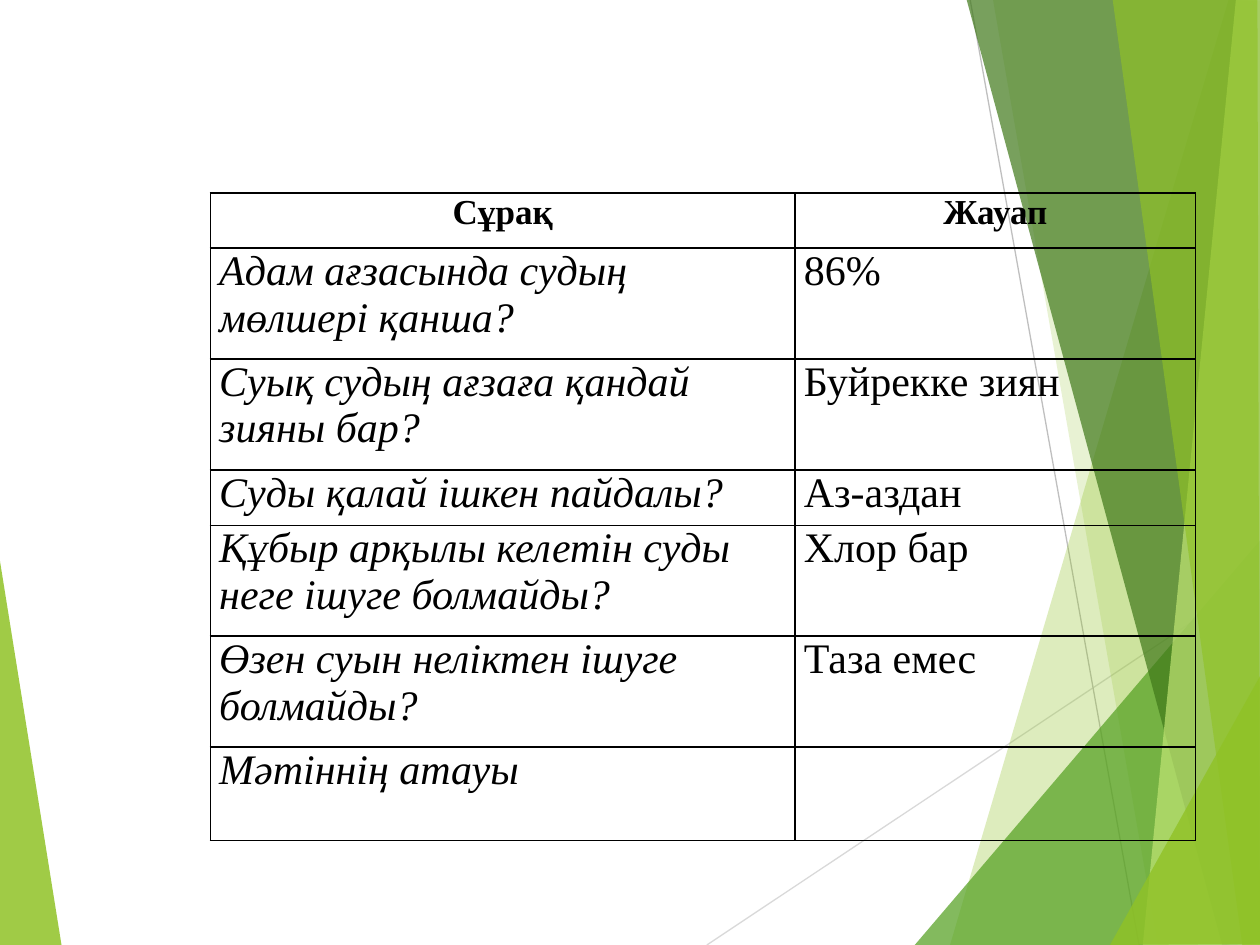
from pptx import Presentation
from pptx.dml.color import RGBColor
from pptx.enum.text import PP_ALIGN as Align
from pptx.oxml.ns import qn
from pptx.util import Inches, Pt
from lxml.etree import SubElement as add_node

COLORS = {
    "lime": "90C226", "green": "54A021", "forest": "3F7819", "pale": "C0E474",
    "silver": "D9D9D9", "gray": "BFBFBF", "black": "000000",
}

# Decorative facets: colour, opacity in percent, corner points
LEFT_FACET = ("lime", 85, [(-0.01, 4.39), (0.49, 7.51), (-0.01, 7.5)])
RIGHT_FACETS = [
    ("lime", 30, [(9.75, 0), (7.54, 7.5), (10.02, 7.51), (10.01, 0.01)]),
    ("lime", 20, [(7.88, -0.01), (9.19, 7.5), (10.01, 7.5), (10.01, -0.01)]),
    ("green", 72, [(7.26, 7.5), (10, 4.29), (10.01, 7.5)]),
    ("forest", 70, [(7.67, -0.01), (9.7, 7.5), (10.01, 7.49), (10.01, -0.01)]),
    ("pale", 70, [(9.81, -0.01), (9.07, 7.5), (10.01, 7.5), (10, -0.01)]),
    ("lime", 65, [(8.83, -0.01), (9.86, 7.5), (10, 7.5), (9.98, -0.01)]),
    ("lime", 80, [(8.81, 7.5), (10.01, 5.35), (10.01, 7.49)]),
]
LINES = [("silver", (5.61, 7.5), (10.01, 4.57)), ("gray", (7.7, 0), (9.04, 7.5))]

# Questions and answers, with the row height in front
ROWS = [
    (0.44, "Сұрақ", "Жауап"),
    (0.88, "Адам ағзасында судың мөлшері қанша?", "86%"),
    (0.88, "Суық судың ағзаға қандай зияны бар?", "Буйрекке зиян"),
    (0.44, "Суды қалай ішкен пайдалы?", "Аз-аздан"),
    (0.88, "Құбыр арқылы келетін суды неге ішуге болмайды?", "Хлор бар"),
    (0.88, "Өзен суын неліктен ішуге болмайды?", "Таза емес"),
    (0.74, "Мәтіннің атауы", ""),
]
COLUMN_WIDTHS = [4.64, 3.18]
HEADER = {"size": Pt(20), "bold": True, "italic": False}
QUESTION = {"size": Pt(24), "bold": False, "italic": True}
ANSWER = {"size": Pt(24), "bold": False, "italic": False}
CELL_MARGINS = {"margin_left": 0.07, "margin_right": 0.07,
                "margin_top": 0, "margin_bottom": 0}


def color(name):
    return RGBColor.from_string(COLORS[name])


class SlideBuilder:
    font = "Times New Roman"

    def __init__(self, page):
        self.page = page

    def facet(self, fill, opacity, points):
        start, *others = [(Inches(x), Inches(y)) for x, y in points]
        builder = self.page.shapes.build_freeform(*start)
        builder.add_line_segments(others, close=True)
        shape = builder.convert_to_shape()
        shape.shadow.inherit = False
        shape.fill.solid()
        shape.fill.fore_color.rgb = color(fill)
        shape.line.fill.background()
        tint = shape._element.spPr.find(qn("a:solidFill"))[0]
        add_node(tint, qn("a:alpha"), val=str(opacity * 1000))

    def line(self, stroke, start, end):
        ends = [Inches(value) for value in start + end]
        connector = self.page.shapes.add_connector(1, *ends)
        connector.line.color.rgb = color(stroke)
        connector.line.width = Pt(0.75)
        add_node(connector._element.spPr, qn("a:effectLst"))

    def table(self, left, top, widths, rows):
        height = sum(row[0] for row in rows)
        frame = self.page.shapes.add_table(
            len(rows), len(widths), Inches(left), Inches(top),
            Inches(sum(widths)), Inches(height))
        grid = frame.table
        grid.first_row = grid.horz_banding = False
        for column, width in zip(grid.columns, widths):
            column.width = Inches(width)
        for index, (row_height, *texts) in enumerate(rows):
            grid.rows[index].height = Inches(row_height)
            formats = (QUESTION, ANSWER) if index else (HEADER, HEADER)
            align = Align.LEFT if index else Align.CENTER
            for cell, text, style in zip(grid.rows[index].cells, texts, formats):
                self.cell(cell, text, style, align)

    def cell(self, cell, text, style, align):
        for name, value in CELL_MARGINS.items():
            setattr(cell, name, Inches(value))
        # Borders come before the fill in the cell properties
        properties = cell._tc.get_or_add_tcPr()
        for side in ("lnL", "lnR", "lnT", "lnB"):
            border = add_node(properties, qn(f"a:{side}"), w=str(Pt(1)))
            fill = add_node(border, qn("a:solidFill"))
            add_node(fill, qn("a:srgbClr"), val=COLORS["black"])
        cell.fill.background()
        if not text:
            return
        para = cell.text_frame.paragraphs[0]
        para.alignment = align
        span = para.add_run()
        span.text = text
        span.font.name = self.font
        span.font.color.rgb = color("black")
        for name, value in style.items():
            setattr(span.font, name, value)


def main():
    deck = Presentation()
    deck.slide_width, deck.slide_height = Inches(10), Inches(7.5)
    builder = SlideBuilder(deck.slides.add_slide(deck.slide_layouts[6]))

    # Background decoration
    builder.facet(*LEFT_FACET)
    for line in LINES:
        builder.line(*line)
    for facet in RIGHT_FACETS:
        builder.facet(*facet)

    # Question and answer table
    builder.table(1.67, 1.53, COLUMN_WIDTHS, ROWS)
    deck.save("out.pptx")


if __name__ == "__main__":
    main()
